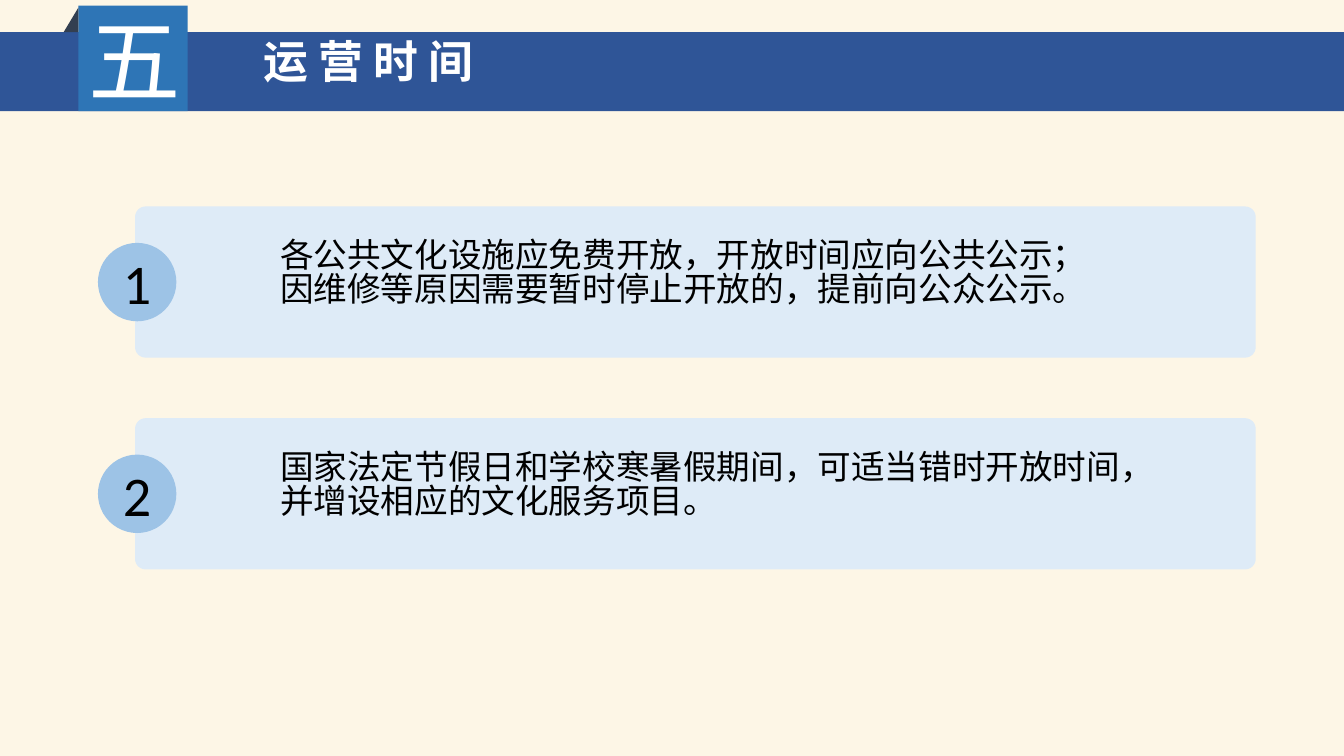
from pptx import Presentation
from pptx.dml.color import RGBColor
from pptx.enum.shapes import MSO_SHAPE
from pptx.enum.text import MSO_ANCHOR, MSO_AUTO_SIZE, PP_ALIGN
from pptx.oxml.ns import qn
from pptx.util import Pt

CREAM = RGBColor(0xFD, 0xF6, 0xE6)
NAVY = RGBColor(0x2F, 0x55, 0x97)
BLUE = RGBColor(0x2E, 0x75, 0xB6)
SLATE = RGBColor(0x33, 0x3F, 0x50)
PALE_BLUE = RGBColor(0xDE, 0xEB, 0xF7)
SKY_BLUE = RGBColor(0x9D, 0xC3, 0xE6)
WHITE = RGBColor(0xFF, 0xFF, 0xFF)
BLACK = RGBColor(0, 0, 0)

RECTANGLE = MSO_SHAPE.RECTANGLE
ROUNDED = MSO_SHAPE.ROUNDED_RECTANGLE
OVAL = MSO_SHAPE.OVAL
TRIANGLE = MSO_SHAPE.RIGHT_TRIANGLE
TOP, MIDDLE = MSO_ANCHOR.TOP, MSO_ANCHOR.MIDDLE
FIT_SHAPE = MSO_AUTO_SIZE.SHAPE_TO_FIT_TEXT
LEFT, CENTER, JUSTIFY = PP_ALIGN.LEFT, PP_ALIGN.CENTER, PP_ALIGN.JUSTIFY

CJK_FONT = "Noto Sans CJK SC"
SLIDE_WIDTH, SLIDE_HEIGHT = 960, 540

OPENING_RULES = [
    ["各公共文化设施应免费开放，开放时间应向公共公示；",
     "因维修等原因需要暂时停止开放的，提前向公众公示。"],
    ["国家法定节假日和学校寒暑假期间，可适当错时开放时间，",
     "并增设相应的文化服务项目。"],
]


def add_filled(slide, kind, left, top, width, height, color):
    shape = slide.shapes.add_shape(kind, Pt(left), Pt(top), Pt(width), Pt(height))
    shape.shadow.inherit = False
    shape.fill.solid()
    shape.fill.fore_color.rgb = color
    shape.line.fill.background()
    return shape


def add_text_box(slide, left, top, width, height):
    box = slide.shapes.add_textbox(Pt(left), Pt(top), Pt(width), Pt(height))
    box.text_frame.word_wrap = True
    box.text_frame.auto_size = FIT_SHAPE
    return box.text_frame


def write(frame, lines, size, font, color, align=LEFT, bold=False, spacing=None):
    frame.text = "\n".join(lines)
    for paragraph in frame.paragraphs:
        paragraph.alignment = align
        paragraph.line_spacing = spacing
        paragraph.font.size = Pt(size)
        paragraph.font.name = font
        paragraph.font.bold = bold
        paragraph.font.color.rgb = color
        # The East Asian typeface governs Chinese characters
        for run in paragraph.runs:
            properties = run._r.get_or_add_rPr()
            properties.set("lang", "zh-CN")
            east_asian = properties.makeelement(qn("a:ea"), {"typeface": CJK_FONT})
            properties.append(east_asian)


def add_header(slide, left, top, width, height):
    # Band with the section number on a folded tab
    add_filled(slide, RECTANGLE, left, top, width, height, NAVY)
    tab_left, tab_top = left + 56, top - 19
    add_filled(slide, RECTANGLE, tab_left, tab_top, 78, height + 19, BLUE)
    fold = add_filled(slide, TRIANGLE, tab_left - 10.5, tab_top + 1.5, 10.5, 17.5, SLATE)
    fold._element.spPr.xfrm.set("flipH", "1")
    number = add_text_box(slide, tab_left, tab_top - 5.5, 73.5, 87)
    write(number, ["五"], 66, "Roboto", WHITE)

    # Title, brought in front of the band
    title = slide.shapes.title
    title.left, title.top = Pt(left + 181), Pt(top + 3.5)
    title.width, title.height = Pt(173), Pt(46)
    frame = title.text_frame
    frame.word_wrap = False
    frame.auto_size = FIT_SHAPE
    frame.vertical_anchor = TOP
    write(frame, ["运 营 时 间"], 32, CJK_FONT, WHITE, bold=True, spacing=0.84)
    slide.shapes._spTree.append(title._element)


def add_rule_card(slide, number, lines, left, top, width, height):
    card = add_filled(slide, ROUNDED, left, top, width, height, PALE_BLUE)
    card.adjustments[0] = 0.07
    rule = add_text_box(slide, left + 96.5, top + 21, 744.5, 65.5)
    write(rule, lines, 24, CJK_FONT, BLACK, align=JUSTIFY, spacing=0.84)

    # Number badge over the card's left edge
    diameter = 56
    badge = add_filled(slide, OVAL, left - 26.5, top + (height - diameter) / 2,
                       diameter, diameter, SKY_BLUE)
    badge.text_frame.vertical_anchor = MIDDLE
    write(badge.text_frame, [str(number)], 40, "Calibri", BLACK, align=CENTER)


def main():
    presentation = Presentation()
    presentation.slide_width = Pt(SLIDE_WIDTH)
    presentation.slide_height = Pt(SLIDE_HEIGHT)
    slide = presentation.slides.add_slide(presentation.slide_layouts[5])
    slide.background.fill.solid()
    slide.background.fill.fore_color.rgb = CREAM

    add_header(slide, 0, 23, SLIDE_WIDTH, 56.5)
    card_top, card_pitch = 147.5, 151.25
    for index, lines in enumerate(OPENING_RULES):
        add_rule_card(slide, index + 1, lines,
                      96.5, card_top + index * card_pitch, 800.5, 108)
    presentation.save("out.pptx")


if __name__ == "__main__":
    main()
